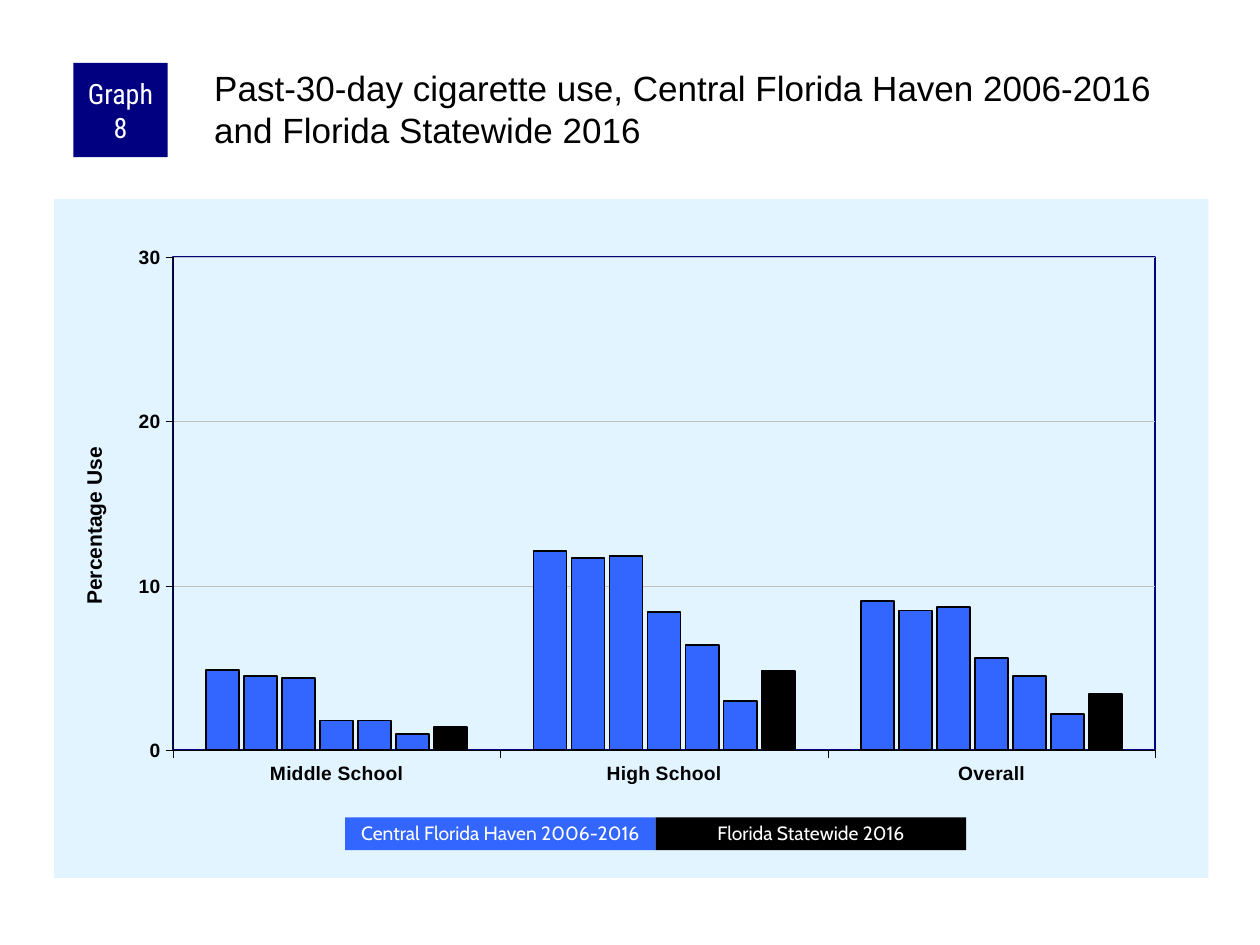
from dataclasses import dataclass

from lxml import etree
from pptx import Presentation
from pptx import util as u
from pptx.chart.data import CategoryChartData
from pptx.dml.color import RGBColor
from pptx.enum import chart as ch
from pptx.enum import shapes, text
from pptx.oxml import parse_xml
from pptx.oxml.ns import nsdecls, qn

BLACK, WHITE, NAVY, BLUE = "000000", "FFFFFF", "000080", "3366FF"
PALE_BLUE, GREY = "E1F4FF", "C0C0C0"
REGION = "Central Florida Haven 2006-2016"
STATE = "Florida Statewide 2016"
SCHOOL_LEVELS = ["Middle School", "High School", "Overall"]
REGION_USE = [
    (4.9, 12.1, 9.1),
    (4.5, 11.7, 8.5),
    (4.4, 11.8, 8.7),
    (1.8, 8.4, 5.6),
    (1.8, 6.4, 4.5),
    (1, 3, 2.2),
]
STATE_USE = (1.4, 4.8, 3.4)


@dataclass
class Label:
    """A filled box with centred white text; lengths in centimetres."""
    wording: str
    left: float
    top: float
    width: float
    height: float
    fill: str
    font: str
    size: float
    side_inset: float = 0.25
    line_spacing: float = 1.0


def rgb(value: str) -> RGBColor:
    return RGBColor.from_string(value)


def style_font(font, name: str, size: float, colour: str, bold: bool = False) -> None:
    font.name, font.size, font.bold = name, u.Pt(size), bold
    font.color.rgb = rgb(colour)


def style_line(line, colour: str, width: float) -> None:
    line.color.rgb = rgb(colour)
    line.width = u.Pt(width)


def draw_label(slide, label: Label) -> None:
    box = slide.shapes.add_shape(
        shapes.MSO_SHAPE.RECTANGLE,
        *(u.Cm(n) for n in (label.left, label.top, label.width, label.height)))
    box.shadow.inherit = False
    box.fill.solid()
    box.fill.fore_color.rgb = rgb(label.fill)
    box.line.fill.background()
    frame = box.text_frame
    frame.word_wrap = True
    frame.vertical_anchor = text.MSO_ANCHOR.MIDDLE
    frame.margin_left = frame.margin_right = u.Cm(label.side_inset)
    frame.margin_top = frame.margin_bottom = 0
    paragraph = frame.paragraphs[0]
    paragraph.alignment = text.PP_ALIGN.CENTER
    paragraph.line_spacing = label.line_spacing
    run = paragraph.add_run()
    run.text = label.wording
    style_font(run.font, label.font, label.size, WHITE)


def draw_heading(slide) -> None:
    heading = slide.shapes.add_textbox(u.Cm(4.24), u.Cm(1.27), u.Cm(20.12), u.Cm(2.11))
    frame = heading.text_frame
    frame.word_wrap = True
    frame.margin_left = frame.margin_top = u.Cm(0.08)
    frame.margin_right = frame.margin_bottom = 0
    run = frame.paragraphs[0].add_run()
    run.text = f"Past-30-day cigarette use, {REGION} and {STATE}"
    style_font(run.font, "Arial", 20, BLACK)


def manual_layout(inner: bool = False, **fractions: float):
    """Return a c:layout element placed by fractions of the chart's size."""
    target = '<c:layoutTarget val="inner"/>' if inner else ""
    modes = "".join(f'<c:{axis}Mode val="edge"/>' for axis in "xy")
    values = "".join(f'<c:{key} val="{value}"/>' for key, value in fractions.items())
    return parse_xml(f'<c:layout {nsdecls("c")}><c:manualLayout>{target}{modes}{values}'
                     '</c:manualLayout></c:layout>')


def area_format(fill: str, line: str):
    """Return a c:spPr element from two DrawingML fragments."""
    return parse_xml(f'<c:spPr {nsdecls("c", "a")}>{fill}{line}</c:spPr>')


def replace_layout(parent: etree.ElementBase, layout, index: int) -> None:
    for old in parent.findall(qn("c:layout")):
        parent.remove(old)
    parent.insert(index, layout)


def style_axis(axis) -> None:
    axis.major_tick_mark = ch.XL_TICK_MARK.OUTSIDE
    axis.minor_tick_mark = ch.XL_TICK_MARK.NONE
    style_font(axis.tick_labels.font, "Arial", 11, BLACK, bold=True)
    style_line(axis.format.line, BLACK, 0.25)


def draw_chart(slide) -> None:
    data = CategoryChartData()
    data.categories = SCHOOL_LEVELS
    for number, use in enumerate(REGION_USE + [STATE_USE], 1):
        data.add_series(f"Series {number}", use)
    chart = slide.shapes.add_chart(
        ch.XL_CHART_TYPE.COLUMN_CLUSTERED,
        u.Cm(1.09), u.Cm(4.01), u.Cm(23.27), u.Cm(13.69), data).chart
    chart.has_legend = chart.has_title = False
    style_font(chart.font, "Arial", 8, BLACK)

    columns = chart.plots[0]
    columns.gap_width, columns.overlap, columns.vary_by_categories = 200, -15, False
    for number, series in enumerate(columns.series):
        series.invert_if_negative = False
        series.format.fill.solid()
        series.format.fill.fore_color.rgb = rgb(BLUE if number < len(REGION_USE) else BLACK)
        style_line(series.format.line, BLACK, 1)

    style_axis(chart.category_axis)
    percent = chart.value_axis
    style_axis(percent)
    percent.minimum_scale, percent.maximum_scale, percent.major_unit = 0, 30, 10
    percent.tick_labels.number_format = "0"
    percent.tick_labels.number_format_is_linked = False
    style_line(percent.major_gridlines.format.line, GREY, 0.25)
    run = percent.axis_title.text_frame.paragraphs[0].add_run()
    run.text = "Percentage Use"
    style_font(run.font, "Arial", 12, BLACK, bold=True)
    percent.axis_title.text_frame._txBody.bodyPr.set("rot", "-5400000")
    title = percent.axis_title._element
    replace_layout(title, manual_layout(x=0.02, y=0.36), 1)

    chart_root = chart._chartSpace
    plot_area = chart_root.chart.plotArea
    replace_layout(plot_area, manual_layout(True, x=0.103, y=0.086, w=0.851, h=0.726), 0)
    solid = '<a:solidFill><a:srgbClr val="{}"/></a:solidFill>'
    plot_area.append(area_format(
        "<a:noFill/>", f'<a:ln w="{u.Pt(1)}">{solid.format(NAVY)}</a:ln>'))
    chart_root.chart.addnext(area_format(
        solid.format(PALE_BLUE), "<a:ln><a:noFill/></a:ln>"))


def main() -> None:
    deck = Presentation()
    deck.slide_width, deck.slide_height = u.Cm(25.4), u.Cm(19.05)
    slide = deck.slides.add_slide(deck.slide_layouts[6])
    draw_chart(slide)
    draw_label(slide, Label("Graph 8", 1.48, 1.27, 1.9, 1.9, NAVY,
                            "Roboto Condensed", 16, side_inset=0.13))
    draw_heading(slide)
    key_left, key_width = 6.96, 6.26
    for column, (wording, fill) in enumerate([(REGION, BLUE), (STATE, BLACK)]):
        draw_label(slide, Label(wording, key_left + column * key_width, 16.48, key_width,
                                0.66, fill, "Cabin", 11, line_spacing=0.9))
    deck.save("out.pptx")


if __name__ == "__main__":
    main()
